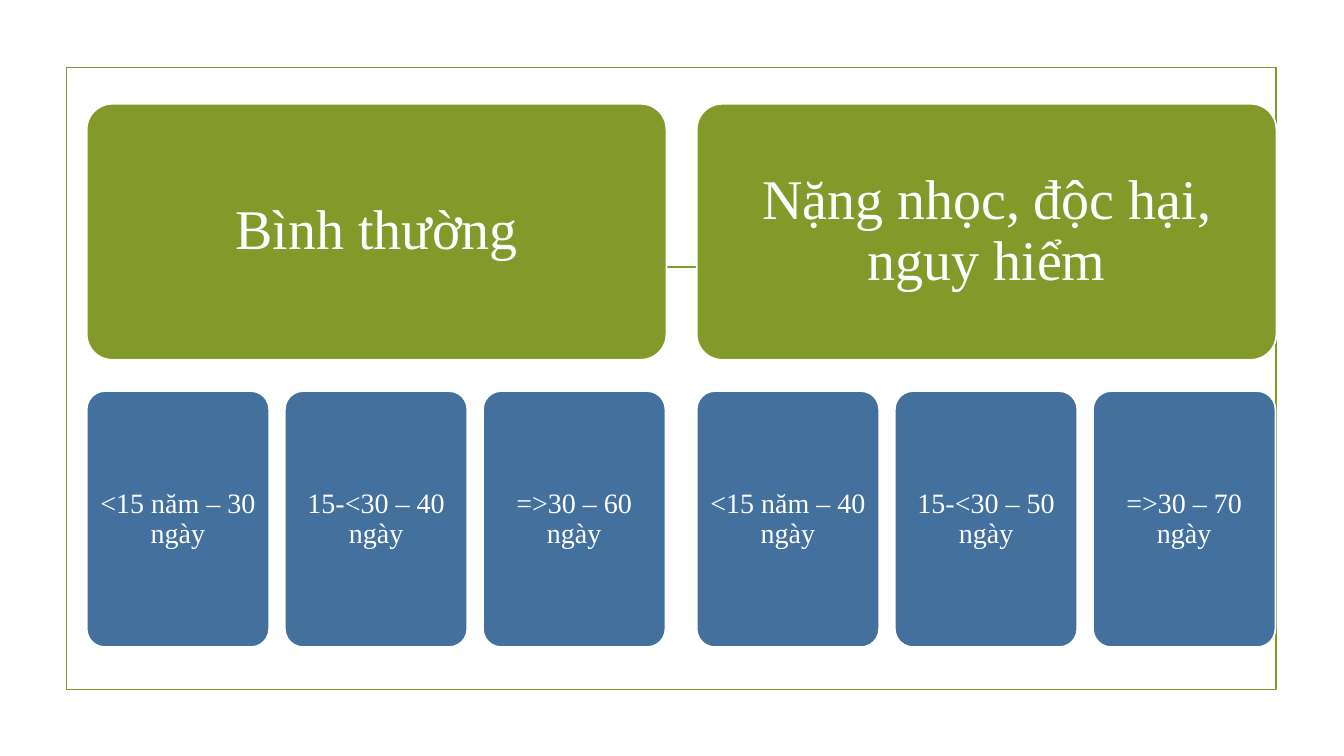
import pptx
import pptx.util
import pptx.dml.color
import pptx.enum.shapes
import pptx.enum.text
import pptx.oxml.ns
from lxml import etree

Inches = pptx.util.Inches
Pt = pptx.util.Pt
PRESET = pptx.enum.shapes.MSO_SHAPE

GREEN, BLUE, WHITE = "83992A", "44709D", "FFFFFF"


def color(hex_code):
    return pptx.dml.color.RGBColor.from_string(hex_code)


class LeaveSlide:
    """Holds the slide and the style shared by its elements."""

    font_name = "Times New Roman"
    line_width = 1.25

    def __init__(self, slide):
        self.slide = slide

    def style_line(self, line, hex_code):
        line.color.rgb = color(hex_code)
        line.width = Pt(self.line_width)

    def frame(self, left, top, width, height):
        border = self.slide.shapes.add_shape(
            PRESET.RECTANGLE, Inches(left), Inches(top), Inches(width), Inches(height))
        border.shadow.inherit = False
        border.fill.background()
        self.style_line(border.line, GREEN)

    def rule(self, left, right, y):
        divider = self.slide.shapes.add_connector(
            pptx.enum.shapes.MSO_CONNECTOR.STRAIGHT,
            Inches(left), Inches(y), Inches(right), Inches(y))
        self.style_line(divider.line, GREEN)
        etree.SubElement(divider._element.spPr, pptx.oxml.ns.qn("a:effectLst"))

    def card(self, left, top, width, height, wording, fill, size, inset):
        card = self.slide.shapes.add_shape(
            PRESET.ROUNDED_RECTANGLE,
            Inches(left), Inches(top), Inches(width), Inches(height))
        card.adjustments[0] = 0.1
        card.shadow.inherit = False
        card.fill.solid()
        card.fill.fore_color.rgb = color(fill)
        self.style_line(card.line, WHITE)

        frame = card.text_frame
        frame.word_wrap = True
        frame.vertical_anchor = pptx.enum.text.MSO_ANCHOR.MIDDLE
        frame.margin_left = frame.margin_right = Inches(inset)
        frame.margin_top = frame.margin_bottom = Inches(inset)
        paragraph = frame.paragraphs[0]
        paragraph.alignment = pptx.enum.text.PP_ALIGN.CENTER
        paragraph.line_spacing = 0.9
        run = paragraph.add_run()
        run.text = wording
        run.font.name = self.font_name
        run.font.size = Pt(size)
        run.font.color.rgb = color(WHITE)


def main():
    deck = pptx.Presentation()
    deck.slide_width, deck.slide_height = Inches(13.33), Inches(7.5)
    page = LeaveSlide(deck.slides.add_slide(deck.slide_layouts[6]))

    # Border and rule behind the cards
    page.frame(0.66, 0.67, 12, 6.17)
    page.rule(1.53, 11.81, 2.65)

    # Working conditions, each with its leave by years of service
    conditions = [
        ("Bình thường",
         ["<15 năm – 30 ngày", "15-<30 – 40 ngày", "=>30 – 60 ngày"]),
        ("Nặng nhọc, độc hại, nguy hiểm",
         ["<15 năm – 40 ngày", "15-<30 – 50 ngày", "=>30 – 70 ngày"]),
    ]
    card_height = 2.54
    for group, (condition, leave_levels) in enumerate(conditions):
        left = 0.86 + group * 6.05
        page.card(left, 1.03, 5.75, card_height, condition, GREEN, 40, 0.17)
        for column, leave in enumerate(leave_levels):
            page.card(left + column * 1.965, 3.88, 1.81, card_height,
                      leave, BLUE, 20, 0.08)

    deck.save("out.pptx")


if __name__ == "__main__":
    main()
